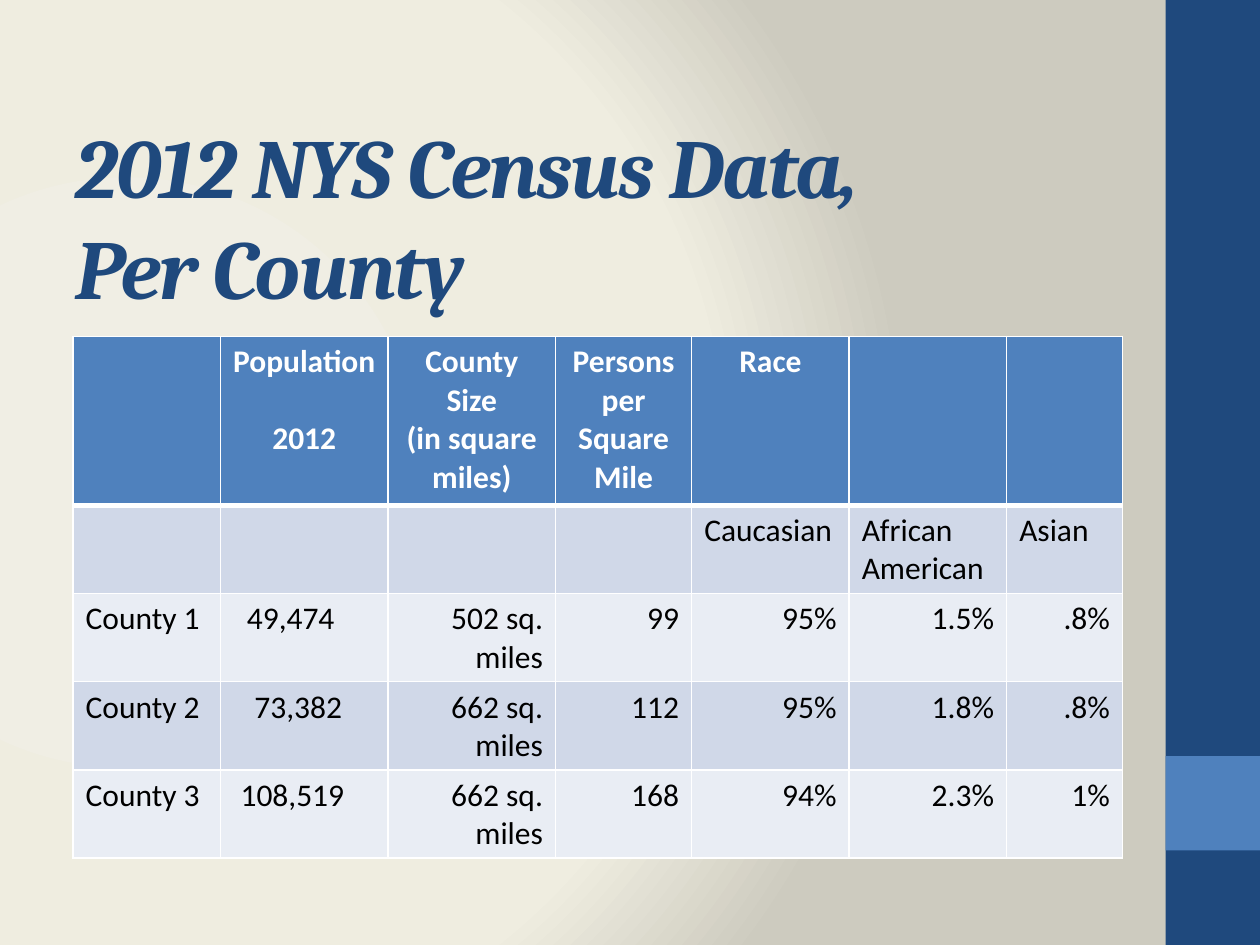
from pptx import Presentation
from pptx import util as u
from pptx.dml.color import RGBColor
from pptx.enum import shapes, text
from pptx.oxml import parse_xml
from pptx.oxml.ns import nsdecls

TITLE = ["2012 NYS Census Data,", "Per County"]
HEADER = [
    [],
    ["Population", "2012"],
    ["County", "Size", "(in square miles)"],
    ["Persons per Square Mile"],
    ["Race"],
    [],
    [],
]
GROUPS = ["", "", "", "", "Caucasian", "African American", "Asian"]
COUNTIES = [
    ["County 1", "49,474", "502 sq. miles", "99", "95%", "1.5%", ".8%"],
    ["County 2", "73,382", "662 sq. miles", "112", "95%", "1.8%", ".8%"],
    ["County 3", "108,519", "662 sq. miles", "168", "94%", "2.3%", "1%"],
]
POPULATION_INDENTS = [0.11, 0.17, 0.06]
COLUMNS = [1.17, 1.33, 1.33, 1.08, 1.25, 1.25, 0.92]
ROWS = [1.34] + [0.7] * 4
WIDTH, HEIGHT = 10, 7.5
BAND = WIDTH * 0.075

THEME = {
    "navy": "1F497D", "blue": "4F81BD", "white": "FFFFFF", "black": "000000",
    "stripes": ["D0D8E8", "E9EDF4"],
    "backdrop": [(0, "F0EEE4"), (75, "EFEDE0"), (100, "CDCBBF")],
    "title_font": "Cambria", "body_font": "Calibri",
    "title_size": 48, "body_size": 18, "blank_line": 22,
}
LEFT, CENTER, RIGHT = text.PP_ALIGN.LEFT, text.PP_ALIGN.CENTER, text.PP_ALIGN.RIGHT


def write(frame, lines, font=THEME["body_font"], size=THEME["body_size"], color=THEME["black"],
          bold=False, italic=False, align=LEFT, tracking=0, indent=0, gap=0):
    for index, line in enumerate(lines):
        para = frame.paragraphs[0] if index == 0 else frame.add_paragraph()
        para.alignment = align
        if index and gap:
            para.space_before = u.Pt(gap)
        if indent:
            para._p.get_or_add_pPr().set("marL", str(u.Inches(indent)))
        span = para.add_run()
        span.text = line
        span.font.name, span.font.size = font, u.Pt(size)
        span.font.bold, span.font.italic = bold, italic
        span.font.color.rgb = RGBColor.from_string(color)
        if tracking:
            span._r.get_or_add_rPr().set("spc", str(tracking * 100))


def paint_backdrop(page):
    stops = "".join(
        f'<a:gs pos="{place * 1000}"><a:srgbClr val="{color}"/></a:gs>'
        for place, color in THEME["backdrop"])
    page._element.cSld.insert(0, parse_xml(
        f'<p:bg {nsdecls("p", "a")}><p:bgPr><a:gradFill rotWithShape="1"><a:gsLst>{stops}</a:gsLst>'
        '<a:path path="circle"><a:fillToRect l="20000" t="50000" r="100000" b="50000"/></a:path>'
        '</a:gradFill><a:effectLst/></p:bgPr></p:bg>'))


def add_band(page, top, height, color):
    box = page.shapes.add_shape(shapes.MSO_SHAPE.RECTANGLE, u.Inches(WIDTH - BAND),
                                u.Inches(top), u.Inches(BAND), u.Inches(height))
    box.shadow.inherit = False
    box.fill.solid()
    box.fill.fore_color.rgb = RGBColor.from_string(color)
    box.line.fill.background()


def style_cell(cell, color, bottom):
    properties = cell._tc.get_or_add_tcPr()
    for side, points in {"L": 1, "R": 1, "T": 1, "B": bottom}.items():
        properties.append(parse_xml(
            f'<a:ln{side} {nsdecls("a")} w="{u.Pt(points)}"><a:solidFill>'
            f'<a:srgbClr val="{THEME["white"]}"/></a:solidFill></a:ln{side}>'))
    cell.fill.solid()
    cell.fill.fore_color.rgb = RGBColor.from_string(color)


def add_census_table(page):
    table = page.shapes.add_table(len(ROWS), len(COLUMNS), u.Inches(0.58), u.Inches(2.67),
                                  u.Inches(sum(COLUMNS)), u.Inches(sum(ROWS))).table
    for column, width in zip(table.columns, COLUMNS):
        column.width = u.Inches(width)
    for row, height in zip(table.rows, ROWS):
        row.height = u.Inches(height)
    for index, lines in enumerate(HEADER):
        cell = table.cell(0, index)
        style_cell(cell, THEME["blue"], bottom=3)
        write(cell.text_frame, lines, color=THEME["white"], bold=True, align=CENTER,
              gap=THEME["blank_line"] if index == 1 else 0)
    for number, values in enumerate([GROUPS] + COUNTIES):
        for index, value in enumerate(values):
            cell = table.cell(number + 1, index)
            style_cell(cell, THEME["stripes"][number % 2], bottom=1)
            if value:
                write(cell.text_frame, [value],
                      align=RIGHT if number and index > 1 else LEFT,
                      indent=POPULATION_INDENTS[number - 1] if number and index == 1 else 0)


def main():
    deck = Presentation()
    deck.slide_width, deck.slide_height = u.Inches(WIDTH), u.Inches(HEIGHT)
    page = deck.slides.add_slide(deck.slide_layouts[6])
    paint_backdrop(page)
    add_band(page, 0, HEIGHT, THEME["navy"])
    add_band(page, HEIGHT * 0.8, BAND, THEME["blue"])
    box = page.shapes.add_textbox(u.Inches(0.5), u.Inches(0.67), u.Inches(9), u.Inches(1.85))
    frame = box.text_frame
    frame.word_wrap = True
    frame.margin_top = u.Inches(0.24)
    write(frame, TITLE, font=THEME["title_font"], size=THEME["title_size"],
          color=THEME["navy"], bold=True, italic=True, tracking=-1)
    add_census_table(page)
    deck.save("out.pptx")


if __name__ == "__main__":
    main()
